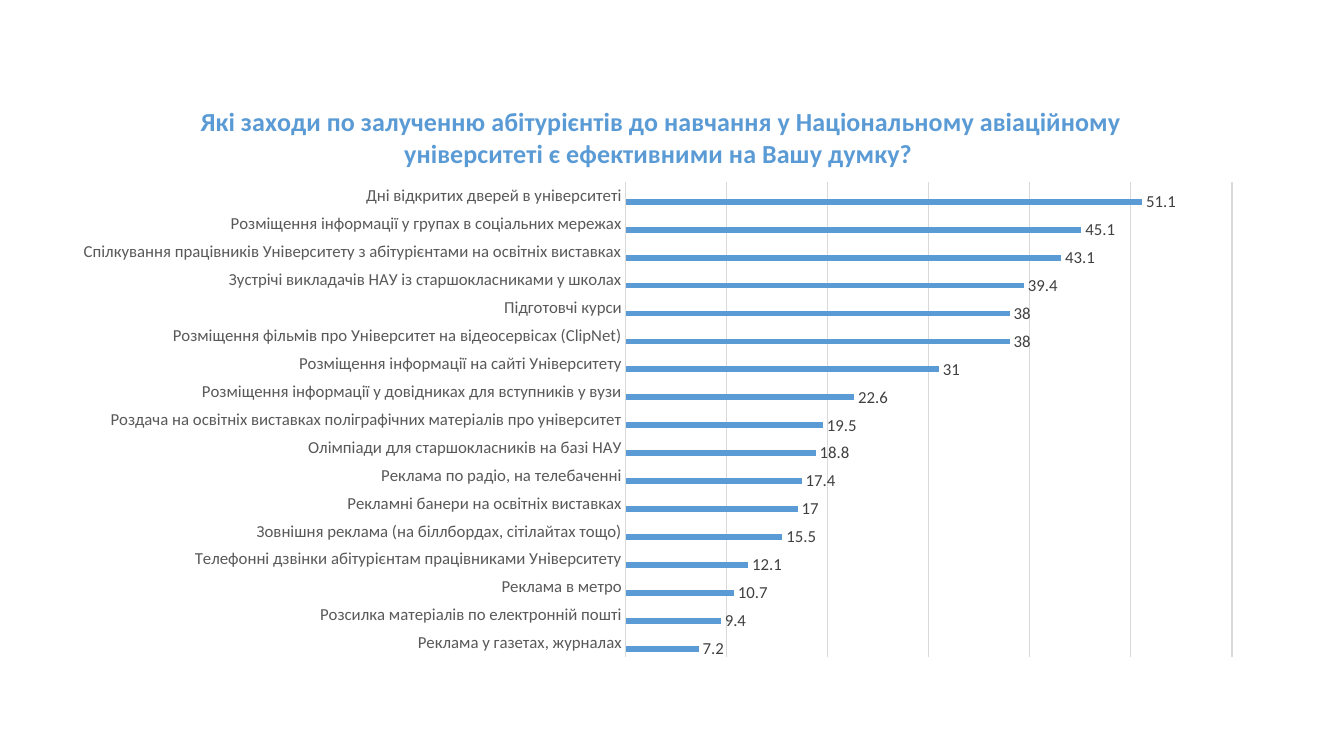
from dataclasses import dataclass

from lxml.etree import SubElement
from pptx import Presentation
from pptx.chart.data import CategoryChartData
from pptx.dml.color import RGBColor
from pptx.enum.chart import XL_CHART_TYPE, XL_LABEL_POSITION, XL_TICK_MARK
from pptx.oxml.ns import qn
from pptx.util import Pt


@dataclass(frozen=True)
class Theme:
    font: str = "Calibri"
    bars: tuple = ("5B9BD5", "ED7D31", "A5A5A5")
    title: str = "5B9BD5"
    category: str = "595959"
    value: str = "404040"
    grid: str = "D9D9D9"
    title_size: float = 18.6
    text_size: float = 12
    line: float = 0.75


TITLE = ("Які заходи по залученню абітурієнтів до навчання у Національному "
         "авіаційному університеті є ефективними на Вашу думку? ")
MEASURES = [
    ("Реклама у газетах, журналах", 7.2),
    ("Розсилка матеріалів по електронній пошті", 9.4),
    ("Реклама в метро", 10.7),
    ("Телефонні дзвінки абітурієнтам працівниками Університету", 12.1),
    ("Зовнішня реклама (на біллбордах, сітілайтах тощо)", 15.5),
    ("Рекламні банери на освітніх виставках", 17),
    ("Реклама по радіо, на телебаченні", 17.4),
    ("Олімпіади для старшокласників на базі НАУ", 18.8),
    ("Роздача на освітніх виставках поліграфічних матеріалів про університет", 19.5),
    ("Розміщення інформації у довідниках для вступників у вузи", 22.6),
    ("Розміщення інформації на сайті Університету", 31),
    ("Розміщення фільмів про Університет на відеосервісах (ClipNet)", 38),
    ("Підготовчі курси", 38),
    ("Зустрічі викладачів НАУ із старшокласниками у школах", 39.4),
    ("Спілкування працівників Університету з абітурієнтами на освітніх виставках", 43.1),
    ("Розміщення інформації у групах в соціальних мережах", 45.1),
    ("Дні відкритих дверей в університеті", 51.1),
]
SLIDE = (960, 540)
CHART_BOX = (42.5, 51.1, 855.4, 427)
PLOT_BOX = (447.1, 130, 433, 339.3)
TITLE_AT = (140, 70)


def set_font(font, size, color, bold=False):
    font.name = theme.font
    font.size = Pt(size)
    font.bold = bold
    font.color.rgb = RGBColor.from_string(color)


def set_line(line):
    line.color.rgb = RGBColor.from_string(theme.grid)
    line.width = Pt(theme.line)


def place(parent, box, inner=False):
    layout = parent.find(qn("c:layout"))
    if layout is None:
        layout = SubElement(parent, qn("c:layout"))
        parent.insert(0, layout)
    manual = SubElement(layout, qn("c:manualLayout"))
    left, top, width, height = CHART_BOX
    fractions = [(box[0] - left) / width, (box[1] - top) / height]
    fractions += [size / total for size, total in zip(box[2:], (width, height))]
    items = [("layoutTarget", "inner")] if inner else []
    items += [("xMode", "edge"), ("yMode", "edge")]
    items += [(tag, f"{f:.4f}") for tag, f in zip("xywh", fractions)]
    for tag, val in items:
        SubElement(manual, qn(f"c:{tag}")).set("val", val)


theme = Theme()
prs = Presentation()
prs.slide_width, prs.slide_height = map(Pt, SLIDE)
s = prs.slides.add_slide(prs.slide_layouts[6])

names, values = zip(*MEASURES)
data = CategoryChartData()
data.categories = names
for i in range(len(theme.bars)):
    data.add_series(f"Series {i + 1}", values if i == 0 else [None] * len(values))
chart = s.shapes.add_chart(XL_CHART_TYPE.BAR_CLUSTERED, *map(Pt, CHART_BOX), data).chart
chart.has_legend = False
set_font(chart.font, theme.text_size, theme.category)

tf = chart.chart_title.text_frame
tf.text = TITLE
set_font(tf.paragraphs[0].font, theme.title_size, theme.title, bold=True)
place(chart.chart_title._element, TITLE_AT)
place(chart._chartSpace.chart.plotArea, PLOT_BOX, inner=True)

cat = chart.category_axis
cat.major_tick_mark = cat.minor_tick_mark = XL_TICK_MARK.NONE
set_font(cat.tick_labels.font, theme.text_size, theme.category)
set_line(cat.format.line)

val = chart.value_axis
val.minimum_scale, val.maximum_scale, val.major_unit = 0, 60, 10
val.has_major_gridlines = True
set_line(val.major_gridlines.format.line)
val.visible = False

plot = chart.plots[0]
plot.gap_width = 182
plot.vary_by_categories = False
for series, color in zip(plot.series, theme.bars):
    series.format.fill.solid()
    series.format.fill.fore_color.rgb = RGBColor.from_string(color)
    labels = series.data_labels
    labels.show_value = True
    labels.position = XL_LABEL_POSITION.OUTSIDE_END
    set_font(labels.font, theme.text_size, theme.value)

prs.save("out.pptx")
